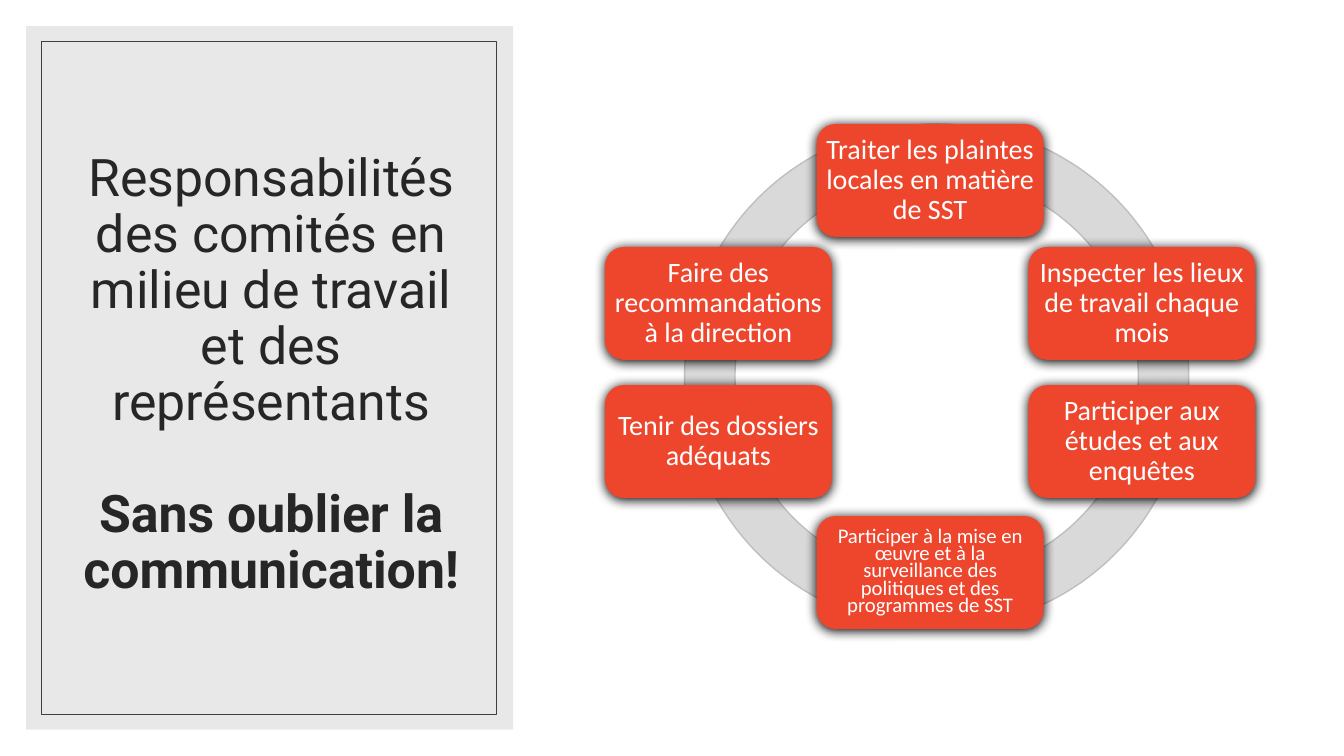
"""Slide on the responsibilities of workplace committees: title panel and a ring of six duties."""
from lxml import etree
from pptx import Presentation
from pptx.dml.color import RGBColor
from pptx.enum.shapes import MSO_SHAPE
from pptx.enum.text import MSO_ANCHOR, PP_ALIGN
from pptx.oxml.ns import qn
from pptx.util import Inches, Pt

RECTANGLE, ROUNDED, DONUT = MSO_SHAPE.RECTANGLE, MSO_SHAPE.ROUNDED_RECTANGLE, MSO_SHAPE.DONUT
MIDDLE, CENTER = MSO_ANCHOR.MIDDLE, PP_ALIGN.CENTER

WHITE = RGBColor(0xFF, 0xFF, 0xFF)
PANEL_GREY = RGBColor(0xE8, 0xE8, 0xE8)
FRAME_GREY = RGBColor(0x40, 0x40, 0x40)
TITLE_GREY = RGBColor(0x26, 0x26, 0x26)
RING_GREY = RGBColor(0xD9, 0xD9, 0xD9)
RING_EDGE = RGBColor(0xBF, 0xBF, 0xBF)
CARD_RED = RGBColor(0xEE, 0x46, 0x2D)

CARD_WIDTH, CARD_HEIGHT, CARD_MARGIN = 2.25, 1.12, 0.02
COLUMNS = [6 + 2.1 * column for column in range(3)]
ROWS = [1.23, 2.45, 3.82, 5.12]

prs = Presentation()
prs.slide_width, prs.slide_height = Inches(13.33), Inches(7.5)
slide = prs.slides.add_slide(prs.slide_layouts[6])


def add_figure(kind, left, top, width, height, fill=None, edge=None, edge_width=1):
    figure = slide.shapes.add_shape(kind, Inches(left), Inches(top), Inches(width), Inches(height))
    figure.shadow.inherit = False
    if fill is None:
        figure.fill.background()
    else:
        figure.fill.solid()
        figure.fill.fore_color.rgb = fill
    if edge is None:
        figure.line.fill.background()
    else:
        figure.line.color.rgb = edge
        figure.line.width = Pt(edge_width)
    return figure


def write(paragraph, text, font, size, color, spacing=0.9, bold=False):
    paragraph.alignment = CENTER
    paragraph.line_spacing = spacing
    run = paragraph.add_run()
    run.text = text
    run.font.name, run.font.size, run.font.bold = font, Pt(size), bold
    run.font.color.rgb = color


add_figure(RECTANGLE, 0.26, 0.26, 4.83, 6.98, PANEL_GREY)

title = slide.shapes.add_textbox(Inches(0.63), Inches(0.61), Inches(4.12), Inches(6.24)).text_frame
title.word_wrap = True
title.vertical_anchor = MIDDLE
write(title.paragraphs[0], "Responsabilités des comités en milieu de travail et des représentants",
      "Roboto", 37, TITLE_GREY)
reminder = title.add_paragraph()
reminder.space_before = Pt(40)
write(reminder, "Sans oublier la communication!", "Roboto", 37, TITLE_GREY, bold=True)

add_figure(RECTANGLE, 0.41, 0.41, 4.51, 6.68, edge=FRAME_GREY, edge_width=0.5)

ring = add_figure(DONUT, 6.79, 1.23, 5, 5, RING_GREY, RING_EDGE)
ring.adjustments[0] = 0.1

duties = [
    (1, 0, "Traiter les plaintes locales en matière de SST", 20, 0.9),
    (2, 1, "Inspecter les lieux de travail chaque mois", 20, 0.9),
    (2, 2, "Participer aux études et aux enquêtes", 20, 0.9),
    (1, 3, "Participer à la mise en œuvre et à la surveillance des politiques et des programmes de SST",
     14.8, 0.7),
    (0, 2, "Tenir des dossiers adéquats", 20, 0.9),
    (0, 1, "Faire des recommandations à la direction", 20, 0.9),
]
for column, row, duty, size, spacing in duties:
    card = add_figure(ROUNDED, COLUMNS[column], ROWS[row], CARD_WIDTH, CARD_HEIGHT, CARD_RED)
    effects = card._element.spPr.find(qn("a:effectLst"))
    shadow = etree.SubElement(effects, qn("a:outerShdw"), blurRad=str(Pt(8.5)), dist=str(Pt(1)),
                              dir="5400000", algn="ctr", rotWithShape="0")
    etree.SubElement(shadow, qn("a:srgbClr"), val="000000")
    frame = card.text_frame
    frame.word_wrap = True
    frame.vertical_anchor = MIDDLE
    frame.margin_left = frame.margin_right = Inches(CARD_MARGIN)
    frame.margin_top = frame.margin_bottom = Inches(CARD_MARGIN)
    write(frame.paragraphs[0], duty, "Calibri", size, WHITE, spacing)

prs.save("out.pptx")
